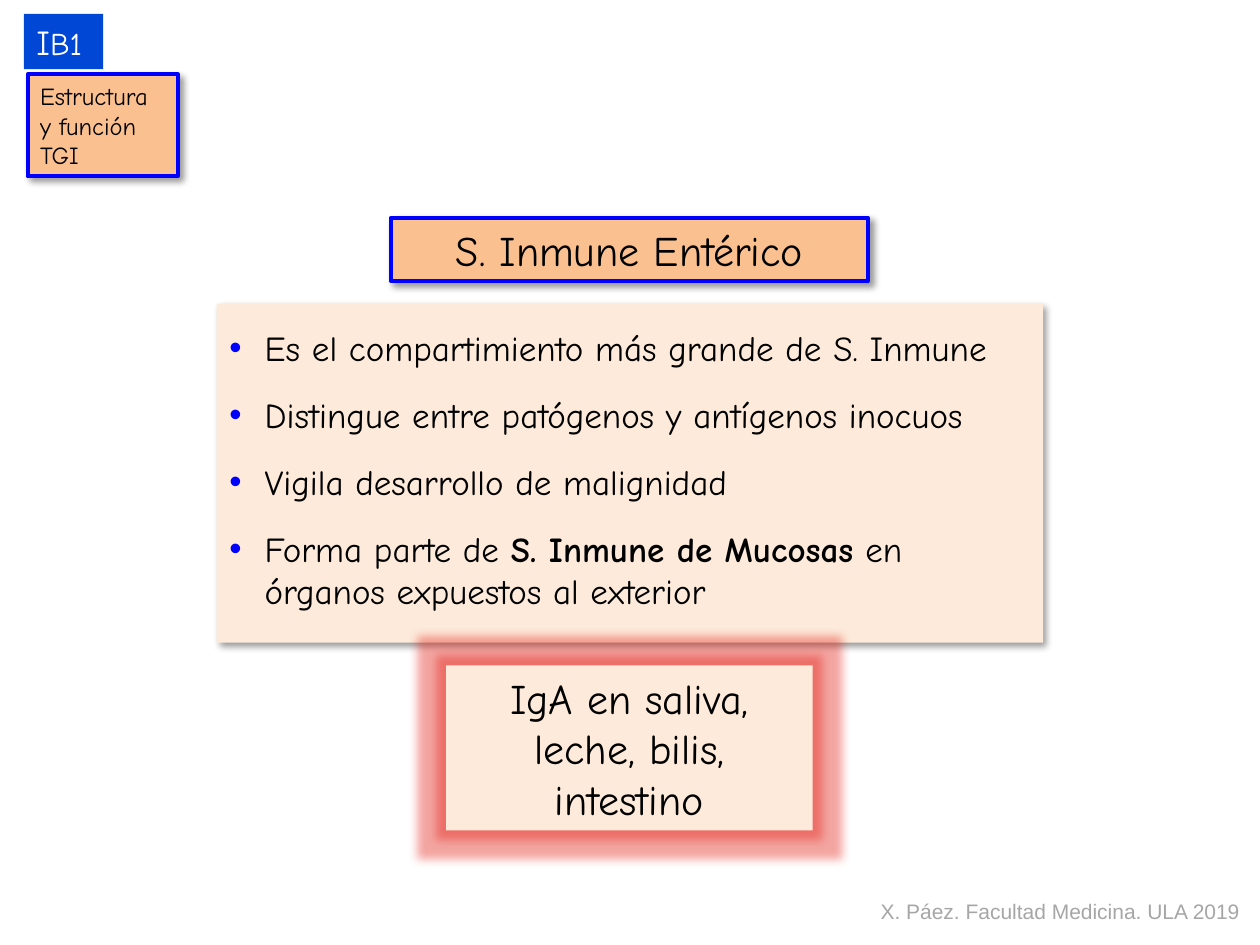
import pptx
import pptx.util
import pptx.dml.color
import pptx.enum.shapes
import pptx.enum.text
import pptx.oxml
import pptx.oxml.ns

Inches = pptx.util.Inches
Pt = pptx.util.Pt
Align = pptx.enum.text.PP_ALIGN
Anchor = pptx.enum.text.MSO_ANCHOR

SHADOW = ('<a:outerShdw blurRad="50800" dist="38100" dir="2700000" algn="tl" rotWithShape="0">'
          '<a:srgbClr val="000000"><a:alpha val="40000"/></a:srgbClr></a:outerShdw>')
GLOW = '<a:glow rad="139700"><a:srgbClr val="E31E14"><a:alpha val="40000"/></a:srgbClr></a:glow>'


def color(value):
    return pptx.dml.color.RGBColor.from_string(value)


def element(xml):
    return pptx.oxml.parse_xml(xml.replace(">", f' {pptx.oxml.ns.nsdecls("a")}>', 1))


class Page:
    """The current slide and its style."""
    font = "Comic Neue"
    peach, cream, blue, black = "FAC090", "FDEADA", "0000FF", "000000"

    def __init__(self, deck):
        self.slide = deck.slides.add_slide(deck.slide_layouts[1])

    def place(self, shape, at):
        shape.left, shape.top, shape.width, shape.height = map(Inches, at)

    def paint(self, shape, fill, line=None, effect=""):
        shape.fill.solid()
        shape.fill.fore_color.rgb = color(fill)
        if line:
            shape.line.color.rgb = color(line)
            shape.line.width = Pt(2.25)
        else:
            shape.line.fill.background()
        shape._element.spPr.append(element(f"<a:effectLst>{effect}</a:effectLst>"))

    def span(self, para, text, size, ink=black, bold=False, font=font):
        run = para.add_run()
        run.text = text
        run.font.name, run.font.size, run.font.bold = font, Pt(size), bold
        run.font.color.rgb = color(ink)

    def frame(self, shape, wrap=True, anchor=Anchor.MIDDLE):
        frame = shape.text_frame
        frame.auto_size = pptx.enum.text.MSO_AUTO_SIZE.NONE
        frame.word_wrap, frame.vertical_anchor = wrap, anchor
        return frame

    def title(self, at, text):
        shape = self.slide.shapes.title
        self.place(shape, at)
        self.paint(shape, self.peach, self.blue, SHADOW)
        para = self.frame(shape).paragraphs[0]
        para.alignment = Align.CENTER
        self.span(para, text, 24)

    def bullets(self, at, items):
        shape = self.slide.placeholders[1]
        self.place(shape, at)
        self.paint(shape, self.cream, effect=SHADOW)
        frame = self.frame(shape, anchor=Anchor.TOP)
        frame.margin_top = Inches(0.18)
        for index, lines in enumerate(items):
            para = frame.paragraphs[0] if index == 0 else frame.add_paragraph()
            para.space_before = Pt(14.4 if index else 0)
            props = para._p.get_or_add_pPr()
            props.set("marL", str(Inches(0.28)))
            props.set("indent", str(-Inches(0.28)))
            for xml in (f'<a:buClr><a:srgbClr val="{self.blue}"/></a:buClr>',
                        '<a:buFont typeface="Arial"></a:buFont>',
                        '<a:buChar char="•"></a:buChar>'):
                props.append(element(xml))
            for number, line in enumerate(lines):
                if number:
                    para.add_line_break()
                for text, bold in line:
                    self.span(para, text, 20, bold=bold)

    def box(self, at, spans, fill, line=None, effect="", ink=black,
            align=Align.LEFT, wrap=True):
        shape = self.slide.shapes.add_shape(
            pptx.enum.shapes.MSO_SHAPE.RECTANGLE, *map(Inches, at))
        self.paint(shape, fill, line, effect)
        para = self.frame(shape, wrap).paragraphs[0]
        para.alignment = align
        for text, size in spans:
            self.span(para, text, size, ink)

    def credit(self, at, text):
        shape = self.slide.shapes.add_textbox(*map(Inches, at))
        para = self.frame(shape, wrap=False, anchor=Anchor.TOP).paragraphs[0]
        self.span(para, text, 12, "A6A6A6", font="Arial")


def main():
    deck = pptx.Presentation()
    deck.slide_width, deck.slide_height = Inches(10), Inches(7.5)
    page = Page(deck)

    # Topic and its main points
    page.bullets((1.72, 2.41, 6.56, 2.69), [
        [[("Es el compartimiento más grande de S. Inmune", False)]],
        [[("Distingue entre patógenos y antígenos inocuos", False)]],
        [[("Vigila desarrollo de malignidad", False)]],
        [[("Forma parte de ", False), ("S. Inmune de Mucosas", True), (" en", False)],
         [("órganos expuestos al exterior", False)]],
    ])
    page.title((3.1, 1.73, 3.79, 0.5), "S. Inmune Entérico")

    # Glowing conclusion
    page.box((3.54, 5.28, 2.91, 1.31), [("IgA en saliva, leche, bilis, intestino", 24)],
             page.cream, effect=GLOW, align=Align.CENTER)

    # Section labels
    page.box((0.19, 0.11, 0.63, 0.44), [("I", 20), ("B1", 18)], "0047D6",
             ink="FFFFFF", wrap=False)
    page.box((0.22, 0.59, 1.19, 0.81), [("Estructura y función TGI", 14)],
             page.peach, page.blue, SHADOW)

    # Author line
    page.credit((6.89, 7.08, 3.08, 0.3), "X. Páez. Facultad Medicina. ULA 2019")
    deck.save("out.pptx")


if __name__ == "__main__":
    main()
